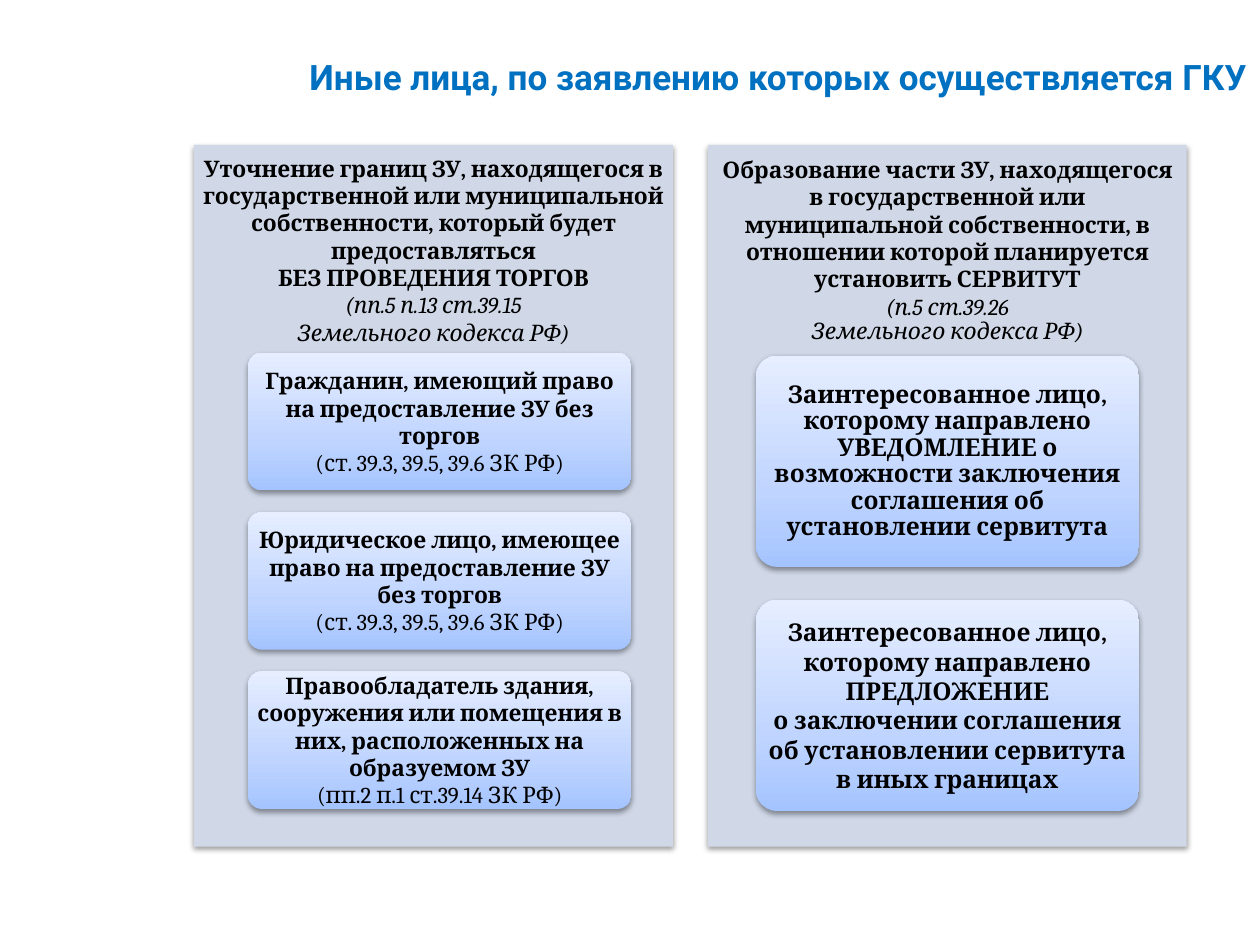
from copy import deepcopy

from lxml.etree import SubElement
from pptx import Presentation
from pptx.dml.color import RGBColor
from pptx.enum.shapes import MSO_SHAPE
from pptx.enum.text import MSO_ANCHOR, MSO_AUTO_SIZE, PP_ALIGN
from pptx.oxml.ns import qn
from pptx.util import Pt

GRADIENT = [(0, "A4C4FF"), (0.35, "BFD4FF"), (1, "E6EEFF")]
BOLD, ITALIC, PLAIN = "bold", "italic", "plain"
PANEL_TOP, PANEL_WIDTH, PANEL_HEIGHT = 82.8, 273.6, 401
HEADER_HEIGHT = 120.2
CARD_WIDTH = 218.9

# Paragraphs are (text, style, line spacing)
COLUMNS = [
    {
        "left": 110.9, "card_left": 141.8, "card_top": 201.6,
        "card_height": 78.7, "card_step": 91, "card_size": 13,
        "header": [
            ("Уточнение границ ЗУ, находящегося в государственной или муниципальной "
             "собственности, который будет предоставляться", BOLD, None),
            ("БЕЗ ПРОВЕДЕНИЯ ТОРГОВ", BOLD, None),
            ("(пп.5 п.13 ст.39.15", ITALIC, None),
            ("Земельного кодекса РФ)", ITALIC, None),
        ],
        "cards": [
            [("Гражданин, имеющий право на предоставление ЗУ без торгов", BOLD, None),
             ("(ст. 39.3, 39.5, 39.6 ЗК РФ)", PLAIN, None)],
            [("Юридическое лицо, имеющее право на предоставление ЗУ без торгов", BOLD, None),
             ("(ст. 39.3, 39.5, 39.6 ЗК РФ)", PLAIN, None)],
            [("Правообладатель здания, сооружения или помещения в них, "
              "расположенных на образуемом ЗУ", BOLD, None),
             ("(пп.2 п.1 ст.39.14 ЗК РФ)", PLAIN, None)],
        ],
    },
    {
        "left": 404.6, "card_left": 432, "card_top": 203.3,
        "card_height": 120.7, "card_step": 139.5, "card_size": 14,
        "header": [
            ("Образование части ЗУ, находящегося в государственной или муниципальной "
             "собственности, в отношении которой планируется установить СЕРВИТУТ", BOLD, None),
            ("(п.5 ст.39.26", ITALIC, None),
            ("Земельного кодекса РФ)", ITALIC, 0.9),
        ],
        "cards": [
            [("Заинтересованное лицо, которому направлено УВЕДОМЛЕНИЕ о возможности "
              "заключения соглашения об установлении сервитута", BOLD, 0.9)],
            [("Заинтересованное лицо, которому направлено ПРЕДЛОЖЕНИЕ", BOLD, None),
             ("о заключении соглашения об установлении сервитута в иных границах", BOLD, None)],
        ],
    },
]


def add_shadow(parent, blur, distance, direction, opacity):
    """Append an outer black shadow to shape or run properties."""
    effects = SubElement(parent, qn("a:effectLst"))
    shadow = SubElement(effects, qn("a:outerShdw"), blurRad=str(Pt(blur)),
                        dist=str(Pt(distance)), dir=str(direction * 60000),
                        rotWithShape="0")
    color = SubElement(shadow, qn("a:srgbClr"), val="000000")
    SubElement(color, qn("a:alpha"), val=str(opacity * 1000))


def write_text(shape, paragraphs, size, inset_x, inset_y):
    frame = shape.text_frame
    frame.word_wrap = True
    frame.vertical_anchor = MSO_ANCHOR.MIDDLE
    frame.margin_left = frame.margin_right = Pt(inset_x)
    frame.margin_top = frame.margin_bottom = Pt(inset_y)
    for index, (text, style, spacing) in enumerate(paragraphs):
        para = frame.add_paragraph() if index else frame.paragraphs[0]
        para.text = text
        para.alignment = PP_ALIGN.CENTER
        para.line_spacing = spacing
        para.font.name = "Cambria"
        para.font.size = Pt(size)
        para.font.bold = style == BOLD
        para.font.italic = style == ITALIC
        para.font.color.rgb = RGBColor.from_string("000000")


deck = Presentation()
deck.slide_width, deck.slide_height = Pt(720), Pt(540)
page = deck.slides.add_slide(deck.slide_layouts[5])

title = page.shapes.title
title.left, title.top, title.width, title.height = Pt(67.7), Pt(20.9), Pt(652.3), Pt(45.4)
title.text_frame.auto_size = MSO_AUTO_SIZE.NONE
title.text_frame.vertical_anchor = MSO_ANCHOR.MIDDLE
para = title.text_frame.paragraphs[0]
para.alignment = PP_ALIGN.RIGHT
span = para.add_run()
span.text = "Иные лица, по заявлению которых осуществляется ГКУ"
span.font.size = Pt(20)
span.font.bold = True
span.font.color.rgb = RGBColor.from_string("0070C0")
add_shadow(span.font.fill._xPr, 3, 3, 45, 43)
span.font.name = "Roboto"

for column in COLUMNS:
    panel = page.shapes.add_shape(MSO_SHAPE.RECTANGLE, Pt(column["left"]), Pt(PANEL_TOP),
                                  Pt(PANEL_WIDTH), Pt(PANEL_HEIGHT))
    panel.fill.solid()
    panel.fill.fore_color.rgb = RGBColor.from_string("D0D8E8")
    panel.line.fill.background()
    add_shadow(panel.element.spPr, 3.1, 1.6, 90, 38)

    header = page.shapes.add_textbox(Pt(column["left"]), Pt(PANEL_TOP),
                                     Pt(PANEL_WIDTH), Pt(HEADER_HEIGHT))
    write_text(header, column["header"], 13, 3.6, 3.6)

    for row, paragraphs in enumerate(column["cards"]):
        card = page.shapes.add_shape(
            MSO_SHAPE.ROUNDED_RECTANGLE, Pt(column["card_left"]),
            Pt(column["card_top"] + row * column["card_step"]),
            Pt(CARD_WIDTH), Pt(column["card_height"]))
        card.adjustments[0] = 0.1
        card.fill.gradient()
        card.fill.gradient_angle = 90
        stop_list = card.element.spPr.find(".//" + qn("a:gsLst"))
        stop_list.insert(1, deepcopy(stop_list[0]))
        for stop, (position, color) in zip(card.fill.gradient_stops, GRADIENT):
            stop.position = position
            stop.color.rgb = RGBColor.from_string(color)
        card.line.fill.background()
        add_shadow(card.element.spPr, 3.1, 1.6, 90, 38)
        write_text(card, paragraphs, column["card_size"], 0.5, 0)

deck.save("out.pptx")
